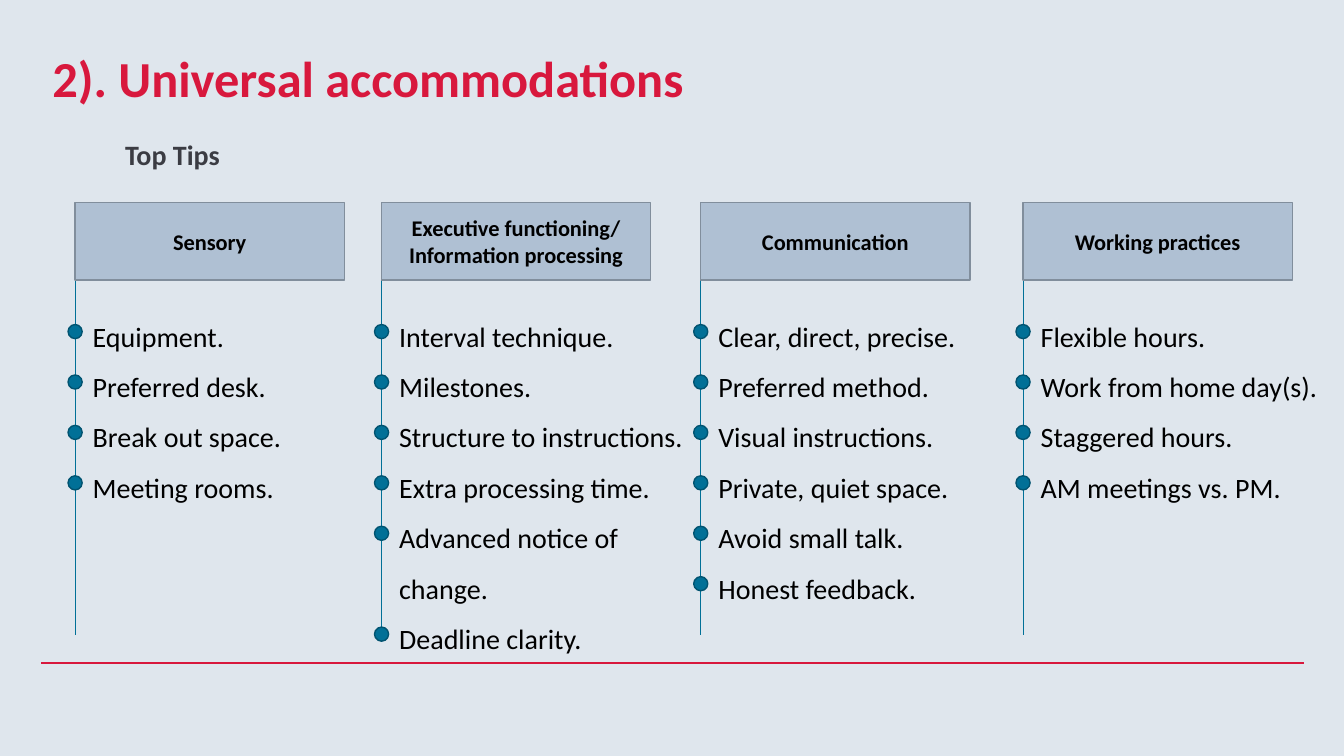
from typing import NamedTuple

from lxml.etree import SubElement as add_sub
from pptx import Presentation
from pptx.dml.color import RGBColor
from pptx.enum.shapes import MSO_CONNECTOR as Link, MSO_SHAPE as Kind
from pptx.enum.text import MSO_ANCHOR as Anchor, MSO_AUTO_SIZE as Fit, PP_ALIGN as Align
from pptx.oxml.ns import qn
from pptx.util import Inches, Pt

WIDE, HIGH = Inches(13.33), Inches(7.5)
PAPER = RGBColor(0xDF, 0xE6, 0xED)
RED = RGBColor(0xD8, 0x18, 0x3D)
BLACK = RGBColor(0, 0, 0)
SLATE = RGBColor(0x3B, 0x3C, 0x43)
STEEL = RGBColor(0xAF, 0xC0, 0xD3)
EDGE = RGBColor(0x81, 0x8E, 0x9C)
TEAL = RGBColor(0x01, 0x70, 0x97)
DEEP = RGBColor(0x01, 0x53, 0x70)

HEAD_TOP, HEAD_W, HEAD_H = 26.8, 20.03, 10.27
STEM_END = 84.0
DOT_TOP, DOT_STEP, DOT_W, DOT_H = 42.93, 6.67, 1.05, 1.87
LIST_GAP, LIST_TOP = 0.57, 39.33


class Box(NamedTuple):
    """Left, top, width and height in percent of the slide."""
    left: float
    top: float
    width: float
    height: float

    def emu(self) -> tuple[int, int, int, int]:
        """Return the box in slide units."""
        return (across(self.left), down(self.top),
                across(self.width), down(self.height))


class Group(NamedTuple):
    """A headed list of tips and the text rows that carry a dot."""
    left: float
    width: float
    head: str
    tips: tuple[str, ...]
    rows: tuple[int, ...]


GROUPS = (
    Group(5.59, 19.28, "Sensory",
          ("Equipment.", "Preferred desk.", "Break out space.",
           "Meeting rooms."), (0, 1, 2, 3)),
    Group(28.39, 23.26, "Executive functioning/\nInformation processing",
          ("Interval technique.", "Milestones.", "Structure to instructions.",
           "Extra processing time.", "Advanced notice of change.",
           "Deadline clarity."), (0, 1, 2, 3, 4, 6)),
    Group(52.14, 19.28, "Communication",
          ("Clear, direct, precise.", "Preferred method.",
           "Visual instructions.", "Private, quiet space.",
           "Avoid small talk.", "Honest feedback."), (0, 1, 2, 3, 4, 5)),
    Group(76.12, 23.33, "Working practices",
          ("Flexible hours.", "Work from home day(s).", "Staggered hours.",
           "AM meetings vs. PM."), (0, 1, 2, 3)),
)


def across(share: float) -> int:
    """Turn a percentage of the slide width into units."""
    return round(WIDE * share / 100)


def down(share: float) -> int:
    """Turn a percentage of the slide height into units."""
    return round(HIGH * share / 100)


def write(shape, text: str, *, size: float = 20, color: RGBColor = BLACK,
          bold: bool = False, align=Align.LEFT, anchor=Anchor.TOP,
          space: float = 1.0, inset: bool = True, fit=Fit.NONE) -> None:
    """Fill a shape with formatted text, one paragraph a line."""
    frame = shape.text_frame
    frame.text = text
    frame.word_wrap = True
    frame.auto_size = fit
    frame.vertical_anchor = anchor
    if not inset:
        frame.margin_left = frame.margin_right = 0
        frame.margin_top = frame.margin_bottom = 0
    for para in frame.paragraphs:
        para.alignment = align
        para.line_spacing = space
        for run in para.runs:
            font = run.font
            font.name, font.size, font.bold = "Calibri", Pt(size), bold
            font.color.rgb = color


def draw_line(slide, x1: float, y1: float, x2: float, y2: float,
              color: RGBColor, weight: float) -> None:
    """Draw a straight line without a shadow."""
    line = slide.shapes.add_connector(
        Link.STRAIGHT, across(x1), down(y1), across(x2), down(y2))
    line.line.color.rgb = color
    line.line.width = Pt(weight)
    add_sub(line._element.spPr, qn("a:effectLst"))


def draw_shape(slide, kind, box: Box, fill: RGBColor, edge: RGBColor):
    """Draw a filled and outlined shape."""
    shape = slide.shapes.add_shape(kind, *box.emu())
    shape.shadow.inherit = False
    shape.fill.solid()
    shape.fill.fore_color.rgb = fill
    shape.line.color.rgb = edge
    shape.line.width = Pt(1)
    return shape


def draw_group(slide, group: Group) -> None:
    """Draw a heading, its stem, dots and tips."""
    left = group.left
    draw_line(slide, left, HEAD_TOP + HEAD_H, left, STEM_END, TEAL, 0.5)
    head = draw_shape(slide, Kind.RECTANGLE,
                      Box(left, HEAD_TOP, HEAD_W, HEAD_H), STEEL, EDGE)
    write(head, group.head, size=16, bold=True, align=Align.CENTER,
          anchor=Anchor.MIDDLE)
    for row in group.rows:
        spot = Box(left - DOT_W / 2, DOT_TOP + row * DOT_STEP, DOT_W, DOT_H)
        draw_shape(slide, Kind.OVAL, spot, TEAL, DEEP)
    span = (group.rows[-1] + 1) * DOT_STEP
    area = Box(left + LIST_GAP, LIST_TOP, group.width, span)
    tips = slide.shapes.add_textbox(*area.emu())
    write(tips, "\n".join(group.tips), space=1.5, fit=Fit.SHAPE_TO_FIT_TEXT)


def main() -> None:
    """Build and save the slide."""
    deck = Presentation()
    deck.slide_width, deck.slide_height = WIDE, HIGH
    slide = deck.slides.add_slide(deck.slide_layouts[5])
    slide.background.fill.solid()
    slide.background.fill.fore_color.rgb = PAPER
    draw_line(slide, 3.08, 87.73, 97, 87.73, RED, 1.25)
    title = slide.shapes.title
    title.left, title.top, title.width, title.height = Box(
        3.9, 6.13, 93.02, 8.13).emu()
    write(title, "2). Universal accommodations", size=36, color=RED,
          bold=True, anchor=Anchor.MIDDLE, inset=False)
    lead = slide.shapes.add_textbox(*Box(9.3, 18.13, 33.23, 6).emu())
    write(lead, "Top Tips", color=SLATE, bold=True, inset=False)
    for group in GROUPS:
        draw_group(slide, group)
    deck.save("out.pptx")


if __name__ == "__main__":
    main()
